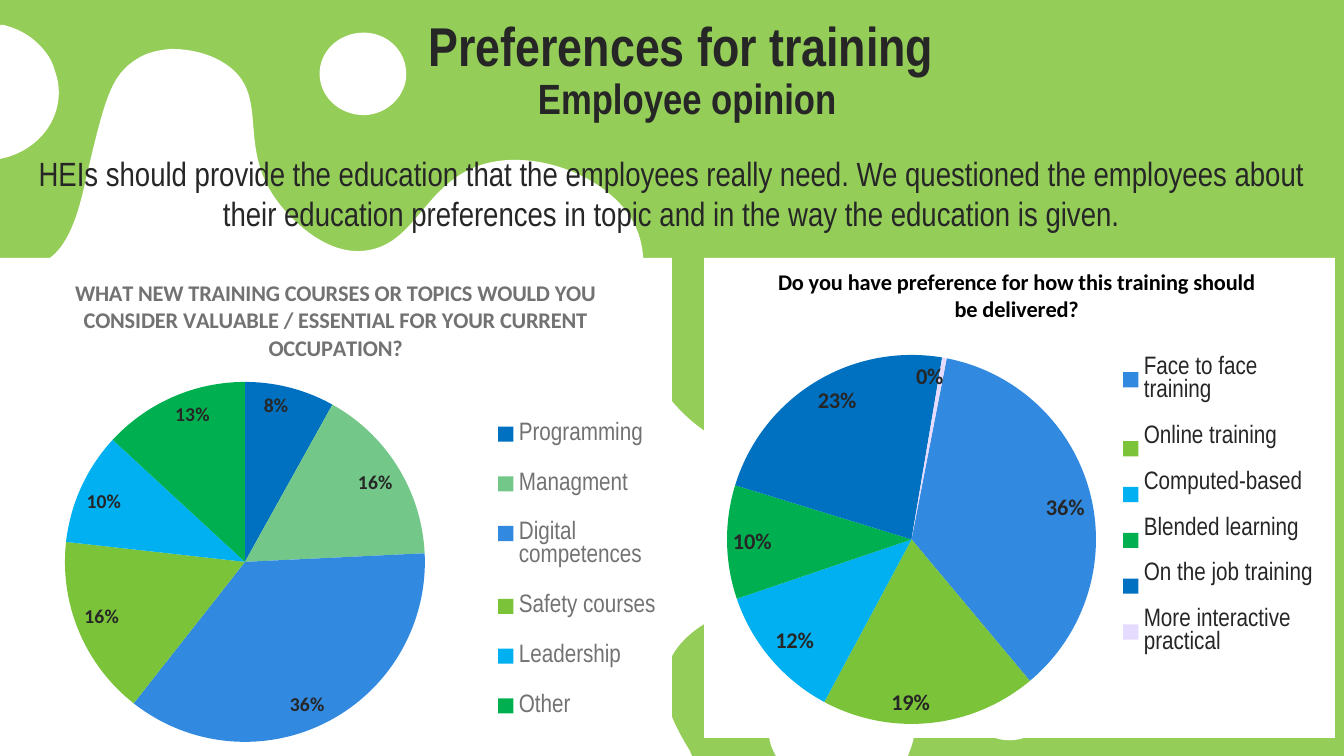
from dataclasses import dataclass

from pptx import Presentation
from pptx.chart.data import CategoryChartData
from pptx.dml.color import RGBColor
from pptx.enum.chart import XL_CHART_TYPE, XL_LABEL_POSITION, XL_LEGEND_POSITION
from pptx.enum.text import MSO_ANCHOR, MSO_AUTO_SIZE, PP_ALIGN
from pptx.oxml import parse_xml
from pptx.oxml.ns import nsdecls, qn
from pptx.util import Pt

PIE = XL_CHART_TYPE.PIE
INSIDE_END = XL_LABEL_POSITION.INSIDE_END
LEGEND_RIGHT = XL_LEGEND_POSITION.RIGHT
BOTTOM = MSO_ANCHOR.BOTTOM
NO_AUTOFIT = MSO_AUTO_SIZE.NONE
CENTER = PP_ALIGN.CENTER

PX = 914400 / 100.8
WIDTH, HEIGHT = 1344, 756


@dataclass(frozen=True)
class Theme:
    """Colours, fonts and type sizes of the slide."""
    green: str = "95CD59"
    white: str = "FFFFFF"
    ink: str = "262626"
    black: str = "000000"
    grey: str = "727272"
    text_font: str = "Arial Narrow"
    chart_font: str = "Calibri"
    title: int = 39
    subtitle: float = 30.2
    body: int = 24
    legend: int = 18
    chart_title: int = 16


T = Theme()

BLUE, SKY, AZURE = "0070C0", "00B0F0", "3289E0"
LIME, EMERALD, MINT, LILAC = "7BC439", "00B050", "73C789", "E4DBFF"

SPLASH = [
    (171, 49), (193, 49, 215, 55, 231, 68), (269, 99, 237, 148, 278, 202),
    (283, 209, 319, 254, 362, 251), (418, 247, 423, 179, 488, 163),
    (533, 152, 592, 171, 623, 207), (670, 262, 615, 323, 665, 392),
    (700, 442, 759, 458, 764, 459), (834, 477, 873, 432, 925, 463),
    (935, 469, 971, 490, 981, 525), (983, 530, 984, 535, 984, 540),
    (986, 579, 956, 618, 919, 629), (870, 643, 846, 596, 777, 601),
    (742, 603, 689, 622, 671, 658), (656, 689, 671, 720, 690, 751),
    (692, 756), (0, 756), (0, 258), (8, 262), (19, 265, 29, 267, 38, 264),
    (68, 255, 79, 211, 86, 179), (105, 98, 111, 75, 137, 59),
    (146, 53, 158, 50, 171, 49),
]
LEFT_DROP = [
    (0, 25), (4, 25), (7, 26), (22, 30, 35, 39, 44, 50),
    (49, 56, 53, 63, 55, 71), (68, 107, 47, 145, 8, 157), (0, 159),
]
TOP_DROP = [
    (358, 33), (373, 31, 388, 37, 397, 48), (402, 54, 405, 61, 406, 69),
    (409, 91, 392, 112, 368, 115), (344, 117, 323, 101, 320, 79),
    (317, 56, 334, 36, 358, 33),
]
BOTTOM_DROP = [
    (842, 657), (865, 657, 887, 667, 901, 685), (905, 691, 909, 698, 911, 705),
    (916, 718, 916, 732, 912, 745), (908, 756), (776, 756), (772, 748),
    (759, 712, 780, 675, 818, 661), (826, 659, 834, 657, 842, 657),
]
RIGHT_DROP = [
    (1005, 658), (1020, 657, 1035, 662, 1044, 673),
    (1049, 679, 1052, 687, 1053, 695), (1056, 717, 1039, 737, 1015, 740),
    (992, 743, 970, 727, 967, 705), (964, 681, 981, 661, 1005, 658),
]

TOPICS = dict(
    title="WHAT NEW TRAINING COURSES OR TOPICS WOULD YOU CONSIDER VALUABLE / "
          "ESSENTIAL FOR YOUR CURRENT OCCUPATION?",
    slices=[("Programming", 8, BLUE), ("Managment", 16, MINT),
            ("Digital competences", 36, AZURE), ("Safety courses", 16, LIME),
            ("Leadership", 10, SKY), ("Other", 13, EMERALD)],
    title_at=(71, 16), pie=(65, 124, 360, 360), legend=(489, 138, 176, 348),
    title_color=T.grey, legend_color=T.grey, label_size=14, start=0)
DELIVERY = dict(
    title="Do you have preference for how this training should be delivered?",
    slices=[("Face to face training", 36, AZURE), ("Online training", 19, LIME),
            ("Computed-based", 12, SKY), ("Blended learning", 10, EMERALD),
            ("On the job training", 23, BLUE),
            ("More interactive practical", 0.4, LILAC)],
    title_at=(70, 5), pie=(23, 97, 369, 369), legend=(415, 76, 198, 344),
    title_color=T.black, legend_color=T.ink, label_size=16, start=11)


def emu(*lengths):
    """Turn px lengths into EMU."""
    return [round(n * PX) for n in lengths]


def style(font, size, color, name=T.text_font, bold=False):
    """Format a font."""
    font.size, font.name, font.bold = Pt(size), name, bold
    font.color.rgb = RGBColor.from_string(color)


def bend(shape, steps, top):
    """Turn the sides of a freeform that have control points into curves."""
    sides = shape.element.findall(".//" + qn("a:lnTo"))
    for side, step in zip(sides, steps):
        if len(step) == 6:
            points = "".join(f'<a:pt x="{x}" y="{y - top}"/>'
                             for x, y in zip(step[::2], step[1::2]))
            side.getparent().replace(side, parse_xml(
                f'<a:cubicBezTo {nsdecls("a")}>{points}</a:cubicBezTo>'))


def add_backdrop(s):
    """Paint the green ground and its white splashes."""
    s.background.fill.solid()
    s.background.fill.fore_color.rgb = RGBColor.from_string(T.green)
    outlines = [LEFT_DROP, TOP_DROP, SPLASH, BOTTOM_DROP, RIGHT_DROP]
    builder = s.shapes.build_freeform(*LEFT_DROP[0], scale=PX)
    for outline in outlines:
        if outline is not LEFT_DROP:
            builder.move_to(*outline[0])
        builder.add_line_segments([step[-2:] for step in outline[1:]], close=True)
    splashes = builder.convert_to_shape()
    bend(splashes, [step for outline in outlines for step in outline[1:]],
         LEFT_DROP[0][1])
    splashes.shadow.inherit = False
    splashes.fill.solid()
    splashes.fill.fore_color.rgb = RGBColor.from_string(T.white)
    splashes.line.fill.background()


def add_title(s, box):
    """Place the title and its subtitle in the title placeholder."""
    title = s.shapes.title
    title.element.getparent().append(title.element)
    title.left, title.top, title.width, title.height = emu(*box)
    tf = title.text_frame
    tf.text = "Preferences for training \nEmployee opinion"
    tf.vertical_anchor, tf.auto_size, tf.word_wrap = BOTTOM, NO_AUTOFIT, True
    for p, size in zip(tf.paragraphs, (T.title, T.subtitle)):
        p.alignment, p.line_spacing, p.space_before = CENTER, 0.9, Pt(0)
        style(p.runs[0].font, size, T.ink, bold=True)


def add_intro(s, box):
    """Place the introduction."""
    tf = s.shapes.add_textbox(*emu(*box)).text_frame
    tf.word_wrap = True
    tf.text = ("HEIs should provide the education that the employees really need. "
               "We questioned the employees about their education preferences "
               "in topic and in the way the education is given.")
    p = tf.paragraphs[0]
    p.alignment = CENTER
    style(p.runs[0].font, T.body, T.ink)


def set_layout(parent, index, box, part, inner=False):
    """Fix a chart part at a px place inside the chart box."""
    for old in parent.findall(qn("c:layout")):
        parent.remove(old)
    tags = '<c:layoutTarget val="inner"/>' if inner else ""
    tags += '<c:xMode val="edge"/><c:yMode val="edge"/>'
    for tag, length, whole in zip("xywh", part, box[2:] * 2):
        tags += f'<c:{tag} val="{length / whole:.4f}"/>'
    parent.insert(index, parse_xml(
        f'<c:layout {nsdecls("c")}><c:manualLayout>{tags}</c:manualLayout></c:layout>'))


def add_pie(s, box, title, slices, title_at, pie, legend, title_color,
            legend_color, label_size, start):
    """Place a pie chart with title, legend and percentages on white."""
    data = CategoryChartData()
    data.categories = [name for name, _, _ in slices]
    data.add_series("Series 1", [value for _, value, _ in slices])
    chart = s.shapes.add_chart(PIE, *emu(*box), data).chart
    style(chart.font, 10, T.ink, T.chart_font)
    root = chart.element
    root.find(qn("c:chart")).addnext(parse_xml(
        f'<c:spPr {nsdecls("c", "a")}><a:solidFill><a:srgbClr val="{T.white}"/>'
        '</a:solidFill><a:ln><a:noFill/></a:ln></c:spPr>'))

    chart.has_title = True
    tf = chart.chart_title.text_frame
    tf.text = title
    style(tf.paragraphs[0].runs[0].font, T.chart_title, title_color, T.chart_font, True)
    set_layout(root.find(".//" + qn("c:title")), 1, box, title_at)

    chart.has_legend = True
    chart.legend.position = LEGEND_RIGHT
    chart.legend.include_in_layout = False
    style(chart.legend.font, T.legend, legend_color)
    set_layout(root.find(".//" + qn("c:legend")), 1, box, legend)
    set_layout(root.find(".//" + qn("c:plotArea")), 0, box, pie, inner=True)

    plot = chart.plots[0]
    plot.vary_by_categories = True
    series = plot.series[0]
    for i, (_, _, color) in enumerate(slices):
        fill = series.points[i].format.fill
        fill.solid()
        fill.fore_color.rgb = RGBColor.from_string(color)
    labels = series.data_labels
    labels.show_percentage, labels.show_value = True, False
    labels.number_format, labels.number_format_is_linked = "0%", False
    labels.position = INSIDE_END
    style(labels.font, label_size, T.ink, T.chart_font, True)
    pie_xml = root.find(".//" + qn("c:pieChart"))
    for old in pie_xml.findall(qn("c:firstSliceAng")):
        pie_xml.remove(old)
    pie_xml.append(parse_xml(f'<c:firstSliceAng {nsdecls("c")} val="{start}"/>'))


def main():
    """Build the slide and save it."""
    prs = Presentation()
    prs.slide_width, prs.slide_height = emu(WIDTH, HEIGHT)
    s = prs.slides.add_slide(prs.slide_layouts[5])
    add_backdrop(s)
    add_pie(s, (704, 258, 631, 480), **DELIVERY)
    add_pie(s, (0, 258, 672, 498), **TOPICS)
    add_title(s, (73, 8, 1229, 121))
    add_intro(s, (0, 148, 1342, 92))
    prs.save("out.pptx")


if __name__ == "__main__":
    main()
